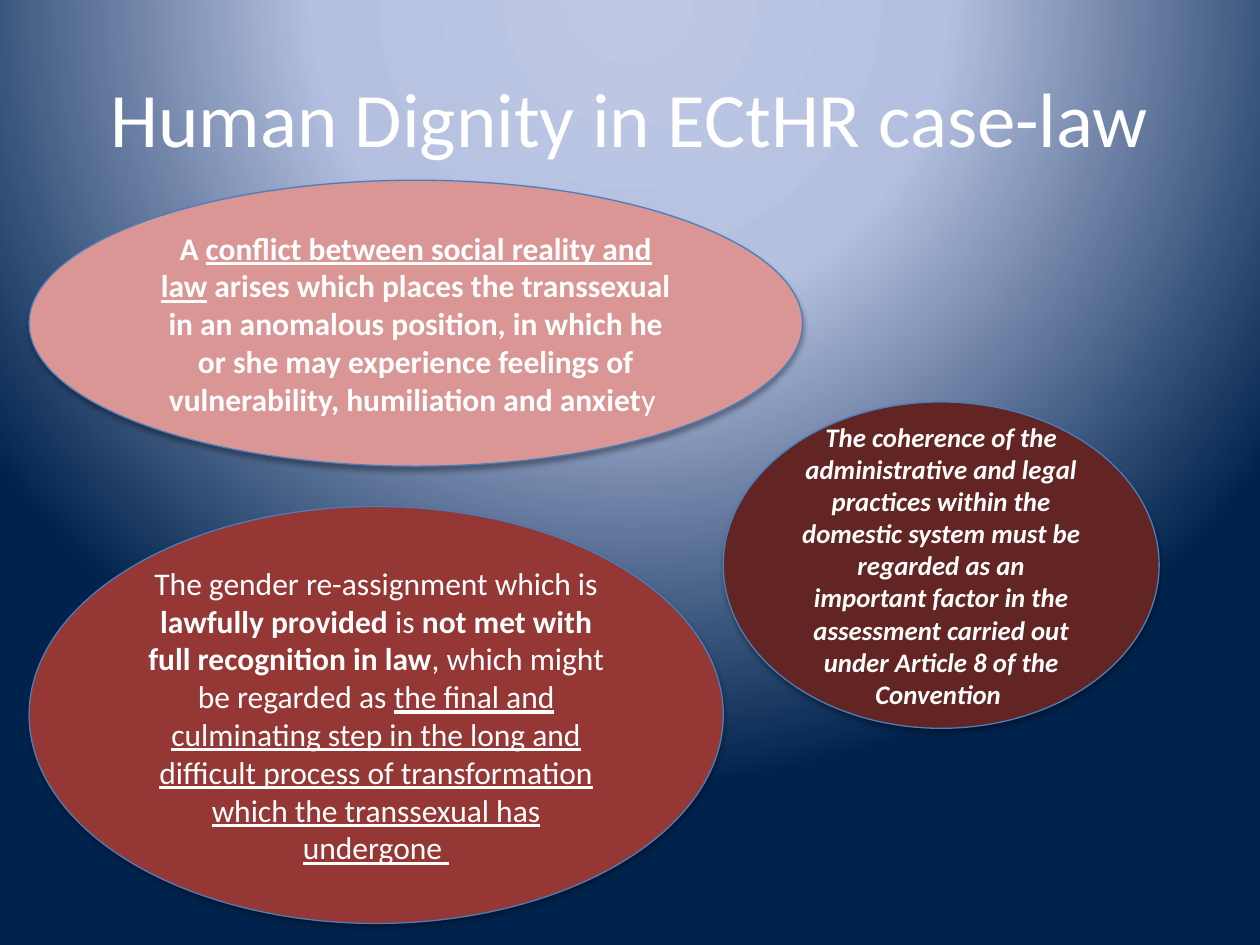
"""Build a slide on human dignity in ECtHR case-law with three quotation ovals."""
from lxml.etree import SubElement
from pptx import Presentation
from pptx.dml.color import RGBColor
from pptx.enum.shapes import MSO_SHAPE
from pptx.enum.text import MSO_ANCHOR, MSO_AUTO_SIZE, PP_ALIGN
from pptx.oxml import parse_xml
from pptx.oxml.ns import nsdecls, qn
from pptx.util import Pt

THEME = {
    "font": "Calibri",
    "text": "FFFFFF",
    "outline": "4B7EBC",
    "shadow": "000000",
    "rose": "D99694",
    "red": "953735",
    "maroon": "632523",
    "background": [(0, "BFC9E5"), (40, "B5C0E0"), (100, "00234D")],
    "title_size": 44,
    "body_size": 18,
    "small_size": 15.3,
}


def add_run(paragraph, text, size=THEME["body_size"], bold=False, italic=False, underline=False):
    run = paragraph.add_run()
    run.text = text
    font = run.font
    font.name = THEME["font"]
    font.size = Pt(size)
    font.color.rgb = RGBColor.from_string(THEME["text"])
    font.bold, font.italic, font.underline = bold, italic, underline


presentation = Presentation()
presentation.slide_width = Pt(720)
presentation.slide_height = Pt(540)
slide = presentation.slides.add_slide(presentation.slide_layouts[5])

slide.background.fill.gradient()
gradient = slide.element.find(".//" + qn("a:gradFill"))
for child in list(gradient):
    gradient.remove(child)
stops = SubElement(gradient, qn("a:gsLst"))
for position, color in THEME["background"]:
    stop = SubElement(stops, qn("a:gs"), pos=str(position * 1000))
    SubElement(stop, qn("a:srgbClr"), val=color)
circle = SubElement(gradient, qn("a:path"), path="circle")
SubElement(circle, qn("a:fillToRect"), l="50000", t="-80000", r="50000", b="180000")

title = slide.shapes.title
title.left, title.top, title.width, title.height = Pt(36), Pt(21.6), Pt(648), Pt(90)
title.text_frame.vertical_anchor = MSO_ANCHOR.MIDDLE
title_paragraph = title.text_frame.paragraphs[0]
title_paragraph.alignment = PP_ALIGN.CENTER
add_run(title_paragraph, "Human Dignity in ECtHR case-law", size=THEME["title_size"])

bold = {"bold": True}
underlined = {"underline": True}
quotations = [
    (MSO_SHAPE.FLOWCHART_CONNECTOR, (16.6, 103, 442, 163.4), "rose", MSO_AUTO_SIZE.SHAPE_TO_FIT_TEXT, [
        ("A ", bold),
        ("conflict between social reality and law", bold | underlined),
        (" arises which places the transsexual in an anomalous position, in which he or she "
         "may experience feelings of vulnerability, humiliation and anxiet", bold),
        ("y ", {}),
    ]),
    (MSO_SHAPE.OVAL, (16.6, 289.4, 396.7, 238.3), "red", MSO_AUTO_SIZE.NONE, [
        ("The gender re-assignment which is ", {}),
        ("lawfully provided ", bold),
        ("is ", {}),
        ("not met with full recognition in law", bold),
        (", which might be regarded as ", {}),
        ("the final and culminating step in the long and difficult process of transformation "
         "which the transsexual has undergone ", underlined),
    ]),
    (MSO_SHAPE.OVAL, (413.3, 229.7, 249.1, 186.5), "maroon", MSO_AUTO_SIZE.NONE, [
        ("The coherence of the administrative and legal practices within the domestic system "
         "must be regarded as an important factor in the assessment carried out under "
         "Article 8 of the Convention ", bold | {"italic": True, "size": THEME["small_size"]}),
    ]),
]

for preset, box, fill_name, auto_size, runs in quotations:
    oval = slide.shapes.add_shape(preset, *[Pt(length) for length in box])
    oval.fill.solid()
    oval.fill.fore_color.rgb = RGBColor.from_string(THEME[fill_name])
    oval.line.color.rgb = RGBColor.from_string(THEME["outline"])
    oval.line.width = Pt(0.75)
    oval.shadow.inherit = False
    oval.element.spPr.find(qn("a:effectLst")).append(parse_xml(
        f'<a:outerShdw {nsdecls("a")} blurRad="{Pt(3.1)}" dist="{Pt(1.8)}" dir="5400000" '
        f'rotWithShape="0"><a:srgbClr val="{THEME["shadow"]}"><a:alpha val="35000"/>'
        '</a:srgbClr></a:outerShdw>'))
    frame = oval.text_frame
    frame.word_wrap = True
    frame.auto_size = auto_size
    frame.vertical_anchor = MSO_ANCHOR.MIDDLE
    paragraph = frame.paragraphs[0]
    paragraph.alignment = PP_ALIGN.CENTER
    for text, style in runs:
        add_run(paragraph, text, **style)

presentation.save("out.pptx")
